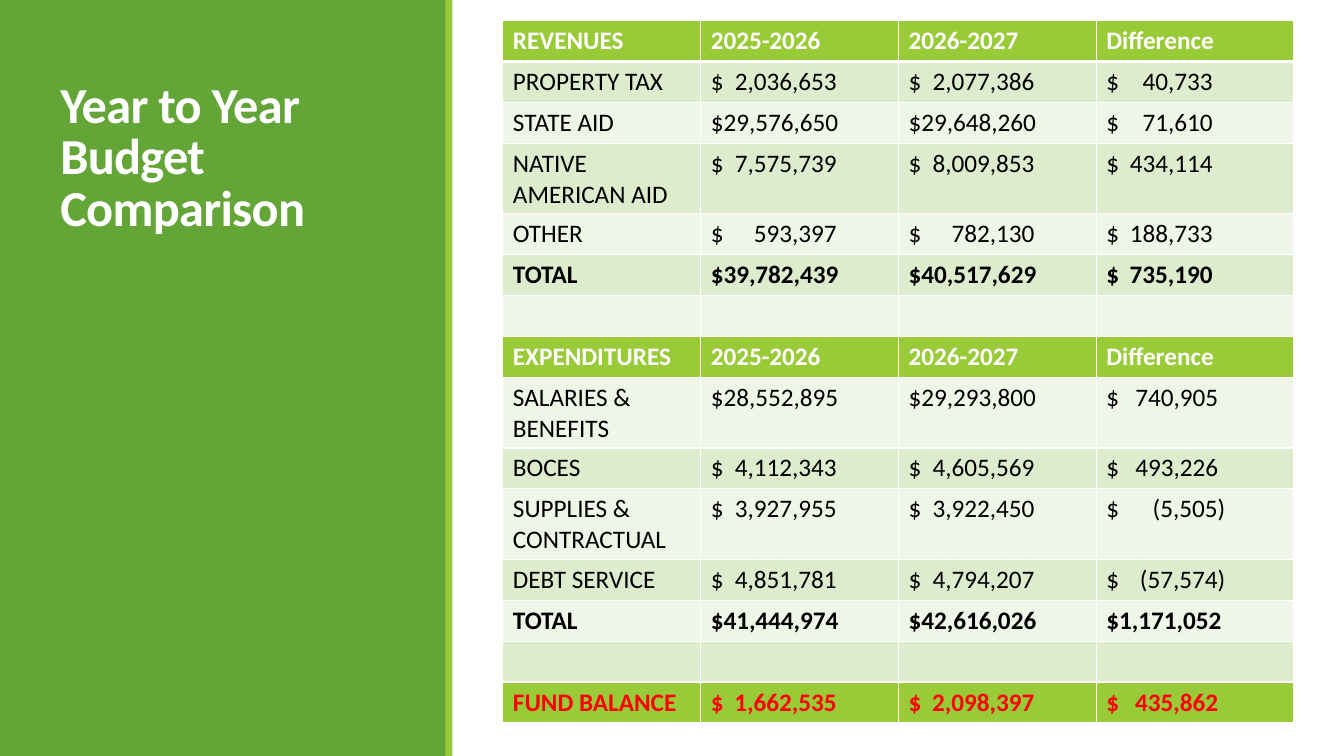
"""Build the year to year budget comparison slide."""
from typing import NamedTuple

from lxml import etree
from pptx import Presentation
from pptx.dml.color import RGBColor
from pptx.enum.shapes import MSO_SHAPE
from pptx.oxml.ns import qn
from pptx.util import Pt

RECTANGLE = MSO_SHAPE.RECTANGLE
WHITE = RGBColor(0xFF, 0xFF, 0xFF)
BLACK = RGBColor(0, 0, 0)
RED = RGBColor(0xFF, 0, 0)
GREEN = RGBColor(0x63, 0xA5, 0x37)
LIME = RGBColor(0x99, 0xCB, 0x38)
BAND_DARK = RGBColor(0xDE, 0xEC, 0xCE)
BAND_LIGHT = RGBColor(0xEF, 0xF6, 0xE8)

FONT = "Calibri"
COL_WIDTH = Pt(141.3)
ROW_HEIGHT = Pt(29.2)
AMOUNT_TAB = 90
PAREN_WIDTH = 5


class Panel(NamedTuple):
    left: float
    width: float
    color: RGBColor


class Row(NamedTuple):
    cells: tuple[str, str, str, str]
    color: RGBColor = BLACK
    bold: bool = False
    filled: bool = False
    diff_tab: float = 80


def heading(label: str) -> Row:
    """Return a heading row for a section."""
    return Row((label, "2025-2026", "2026-2027", "Difference"), WHITE, True, True)


PANELS = [Panel(0, 319, GREEN), Panel(318.2, 5, LIME)]
BLANK = Row(("", "", "", ""))
ROWS = [
    heading("REVENUES"),
    Row(("PROPERTY TAX", "$\t2,036,653", "$\t2,077,386", "$\t40,733"), diff_tab=76),
    Row(("STATE AID", "$29,576,650", "$29,648,260", "$\t71,610"), diff_tab=76),
    Row(("NATIVE AMERICAN AID", "$\t7,575,739", "$\t8,009,853", "$\t434,114"), diff_tab=76),
    Row(("OTHER", "$\t593,397", "$\t782,130", "$\t188,733"), diff_tab=76),
    Row(("TOTAL", "$39,782,439", "$40,517,629", "$\t735,190"), bold=True, diff_tab=76),
    BLANK,
    heading("EXPENDITURES"),
    Row(("SALARIES & BENEFITS", "$28,552,895", "$29,293,800", "$\t740,905")),
    Row(("BOCES", "$\t4,112,343", "$\t4,605,569", "$\t493,226")),
    Row(("SUPPLIES & CONTRACTUAL", "$\t3,927,955", "$\t3,922,450", "$\t(5,505)")),
    Row(("DEBT SERVICE", "$\t4,851,781", "$\t4,794,207", "$\t(57,574)")),
    Row(("TOTAL", "$41,444,974", "$42,616,026", "$1,171,052"), bold=True),
    BLANK,
    Row(("FUND BALANCE", "$\t1,662,535", "$\t2,098,397", "$\t435,862"), RED, True, True),
]


def write(tf, text: str, *, size: float, color: RGBColor, bold: bool,
          line_spacing: float | None = None, tracking: float = 0, tab: float = 0) -> None:
    """Write one formatted paragraph into a text frame."""
    p = tf.paragraphs[0]
    if line_spacing:
        p.line_spacing = line_spacing
    if tab:
        tabs = etree.SubElement(p._p.get_or_add_pPr(), qn("a:tabLst"))
        etree.SubElement(tabs, qn("a:tab"), pos=str(Pt(tab)), algn="r")
    r = p.add_run()
    r.text = text
    r.font.name, r.font.size, r.font.bold = FONT, Pt(size), bold
    r.font.color.rgb = color
    if tracking:
        r._r.get_or_add_rPr().set("spc", str(round(tracking * 100)))


def add_panel(slide, panel: Panel) -> None:
    """Draw a full-height colour panel."""
    sp = slide.shapes.add_shape(RECTANGLE, Pt(panel.left), 0, Pt(panel.width), Pt(540))
    sp.shadow.inherit = False
    sp.fill.solid()
    sp.fill.fore_color.rgb = panel.color
    sp.line.fill.background()


def add_borders(cell, top: float, bottom: float) -> None:
    """Give a cell white borders."""
    tc_pr = cell._tc.get_or_add_tcPr()
    for side, width in (("L", 1), ("R", 1), ("T", top), ("B", bottom)):
        ln = etree.SubElement(tc_pr, qn(f"a:ln{side}"), w=str(Pt(width)))
        fill = etree.SubElement(ln, qn("a:solidFill"))
        etree.SubElement(fill, qn("a:srgbClr"), val=str(WHITE))


def add_budget(slide) -> None:
    """Draw the budget table."""
    frame = slide.shapes.add_table(len(ROWS), 4, Pt(359.2), Pt(14.7), COL_WIDTH * 4, Pt(502))
    table = frame.table
    for column in table.columns:
        column.width = COL_WIDTH
    for i, row in enumerate(ROWS):
        table.rows[i].height = ROW_HEIGHT
        band = BAND_DARK if i % 2 else BAND_LIGHT
        for j, text in enumerate(row.cells):
            cell = table.cell(i, j)
            add_borders(cell, 3 if i == 1 else 1, 3 if i == 0 else 1)
            cell.fill.solid()
            cell.fill.fore_color.rgb = LIME if row.filled else band
            if text:
                tab = row.diff_tab if j == 3 else AMOUNT_TAB
                if text.endswith(")"):
                    tab += PAREN_WIDTH
                write(cell.text_frame, text, size=18, color=row.color, bold=row.bold,
                      tab=tab if "\t" in text else 0)
    frame.height = Pt(502)


def main() -> None:
    """Build and save the slide."""
    prs = Presentation()
    prs.slide_width, prs.slide_height = Pt(960), Pt(540)
    slide = prs.slides.add_slide(prs.slide_layouts[6])
    for panel in PANELS:
        add_panel(slide, panel)
    title = slide.shapes.add_textbox(Pt(36), Pt(55.4), Pt(252), Pt(180))
    title.text_frame.word_wrap = True
    write(title.text_frame, "Year to Year Budget Comparison", size=36, color=WHITE,
          bold=True, line_spacing=0.85, tracking=-0.5)
    add_budget(slide)
    prs.save("out.pptx")


if __name__ == "__main__":
    main()
